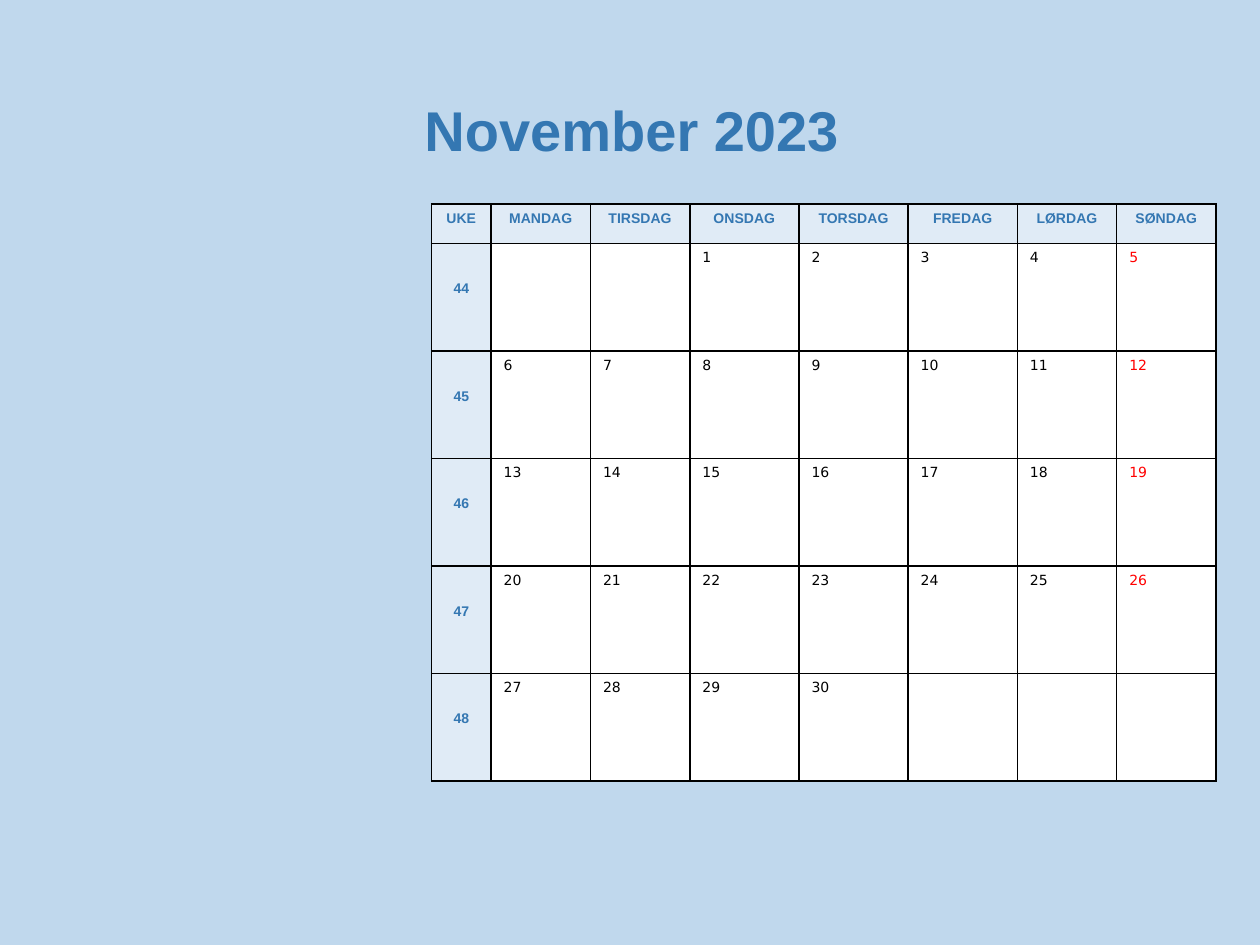
import lxml.etree
import pptx
import pptx.dml.color
import pptx.enum.text
import pptx.oxml.ns
import pptx.util

Pt = pptx.util.Pt
ALIGN = pptx.enum.text.PP_ALIGN
COLORS = {
    "background": "C0D8ED",
    "heading": "3477B2",
    "label_fill": "E0EBF6",
    "day_fill": "FFFFFF",
    "day": "000000",
    "sunday": "FF0000",
    "border": "000000",
}
WEEKDAYS = ["MANDAG", "TIRSDAG", "ONSDAG", "TORSDAG", "FREDAG", "LØRDAG", "SØNDAG"]
FIRST_WEEK, WEEK_COUNT = 44, 5
FIRST_WEEKDAY, DAY_COUNT = 2, 30  # the month starts on the third weekday


def rgb(name):
    return pptx.dml.color.RGBColor.from_string(COLORS[name])


def style_text(paragraph, size, font, color, bold=False, align=ALIGN.LEFT):
    paragraph.alignment = align
    for run in paragraph.runs:
        run.font.size = Pt(size)
        run.font.name = font
        run.font.bold = bold
        run.font.color.rgb = rgb(color)


def add_borders(cell):
    properties = cell._tc.get_or_add_tcPr()
    qn = pptx.oxml.ns.qn
    for side in ("lnL", "lnR", "lnT", "lnB"):
        line = lxml.etree.SubElement(properties, qn("a:" + side), w=str(Pt(1)))
        fill = lxml.etree.SubElement(line, qn("a:solidFill"))
        lxml.etree.SubElement(fill, qn("a:srgbClr"), val=COLORS["border"])


def fill_cell(cell, text, fill):
    add_borders(cell)
    cell.fill.solid()
    cell.fill.fore_color.rgb = rgb(fill)
    cell.text_frame.text = text
    return cell.text_frame.paragraphs[0]


def label_cell(cell, text):
    paragraph = fill_cell(cell, text, "label_fill")
    style_text(paragraph, 8, "Arial", "heading", bold=True, align=ALIGN.CENTER)


def add_title(slide, left, top, width, height):
    title = slide.shapes.add_textbox(Pt(left), Pt(top), Pt(width), Pt(height))
    frame = title.text_frame
    frame.word_wrap = True
    frame.vertical_anchor = pptx.enum.text.MSO_ANCHOR.MIDDLE
    frame.text = "November 2023"
    style_text(frame.paragraphs[0], 32, "Arial", "heading", bold=True)


def add_calendar(slide, left, top, width, height):
    calendar = slide.shapes.add_table(
        WEEK_COUNT + 1, len(WEEKDAYS) + 1, Pt(left), Pt(top), Pt(width), Pt(height)
    ).table
    calendar.first_row = calendar.horz_banding = False

    # Column and row sizes
    week_width, wide_day, header_height = 34, 62.4, 22.6
    narrow_day = (width - week_width - 3 * wide_day) / 4
    day_widths = [narrow_day] * 2 + [wide_day] * 3 + [narrow_day] * 2
    for column, column_width in zip(calendar.columns, [week_width] + day_widths):
        column.width = Pt(column_width)
    for row in calendar.rows:
        row.height = Pt((height - header_height) / WEEK_COUNT)
    calendar.rows[0].height = Pt(header_height)

    # Header row
    for column, heading in enumerate(["UKE"] + WEEKDAYS):
        label_cell(calendar.cell(0, column), heading)

    # Week numbers and days
    for week in range(WEEK_COUNT):
        week_cell = calendar.cell(week + 1, 0)
        label_cell(week_cell, str(FIRST_WEEK + week))
        week_cell.margin_top = Pt(21.5)
        for weekday in range(len(WEEKDAYS)):
            day = week * len(WEEKDAYS) + weekday - FIRST_WEEKDAY + 1
            text = str(day) if 1 <= day <= DAY_COUNT else ""
            paragraph = fill_cell(calendar.cell(week + 1, weekday + 1), text, "day_fill")
            color = "sunday" if weekday == len(WEEKDAYS) - 1 else "day"
            style_text(paragraph, 8, "DejaVu Sans", color)


def main():
    deck = pptx.Presentation()
    deck.slide_width, deck.slide_height = Pt(720), Pt(540)
    slide = deck.slides.add_slide(deck.slide_layouts[6])
    slide.background.fill.solid()
    slide.background.fill.fore_color.rgb = rgb("background")
    add_calendar(slide, 246.6, 116.6, 448.4, 329.6)
    add_title(slide, 235.5, 37.5, 360, 72.5)
    deck.save("out.pptx")


if __name__ == "__main__":
    main()
